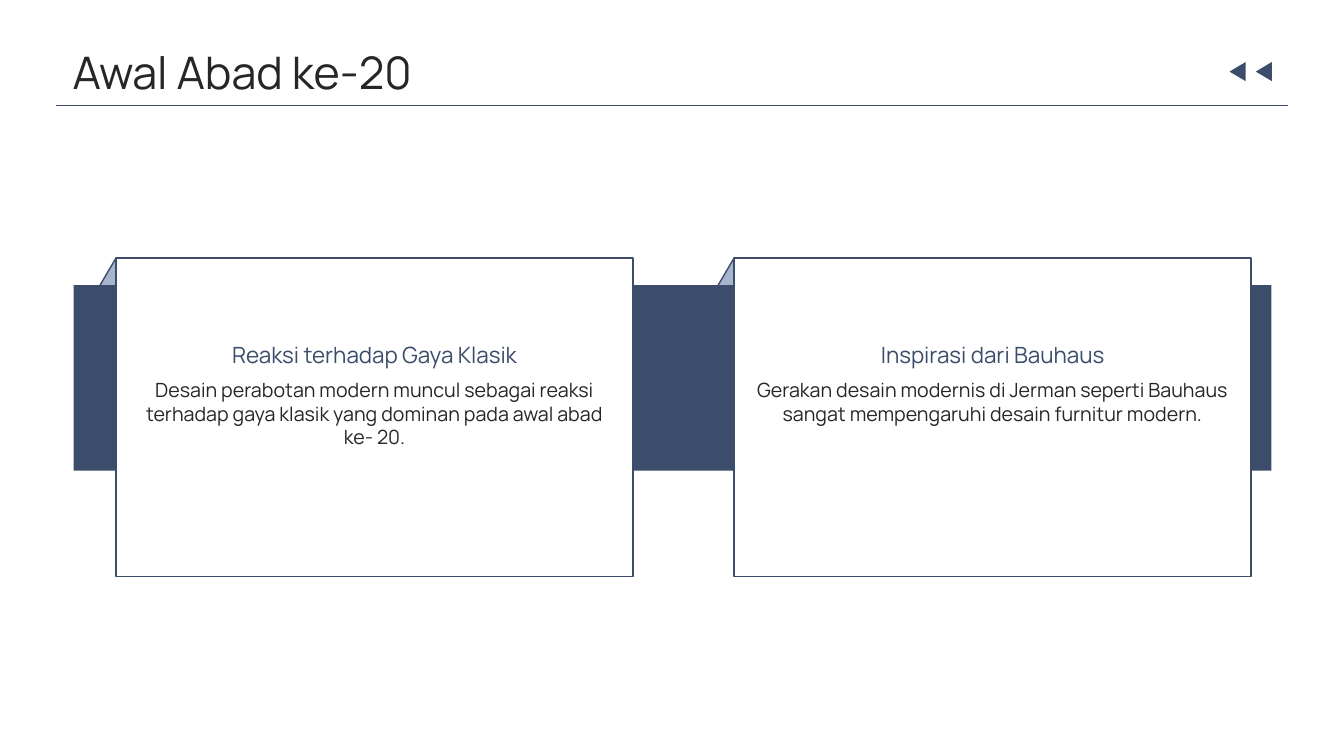
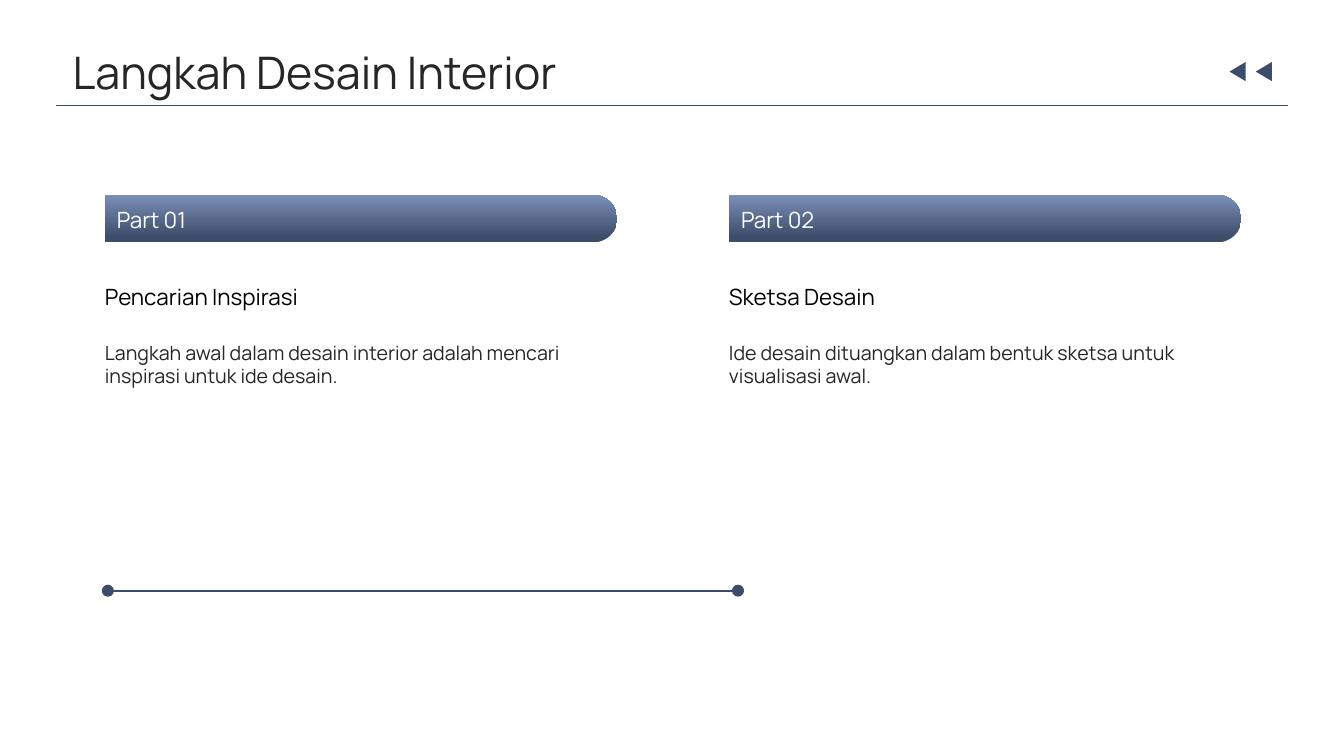
from lxml import etree
from pptx import Presentation
from pptx import util as u
from pptx.dml import color
from pptx.enum import shapes, text
from pptx.oxml import ns

COLORS = {"navy": "3C4C6B", "steel": "7B8FB5", "fold": "A7B4CE",
          "ink": "262626", "black": "000000", "white": "FFFFFF"}
RGB = {name: color.RGBColor.from_string(value) for name, value in COLORS.items()}
FONT = "Manrope"
SHAPE, ALIGN, ANCHOR = shapes.MSO_SHAPE, text.PP_ALIGN, text.MSO_ANCHOR


def add_shape(s, kind, box, fill, line=None, rotation=0):
    sp = s.shapes.add_shape(kind, *map(u.Inches, box))
    sp.shadow.inherit = False
    sp.rotation = rotation
    sp.fill.solid()
    sp.fill.fore_color.rgb = RGB[fill]
    if line:
        sp.line.color.rgb = RGB[line]
        sp.line.width = u.Pt(1)
    else:
        sp.line.fill.background()
    return sp


def add_text(s, content, box, size=14, fill="ink", align=ALIGN.LEFT,
             anchor=ANCHOR.TOP, wrap=True, sp=None):
    left, top, width, height = map(u.Inches, box)
    if sp is None:
        sp = s.shapes.add_textbox(left, top, width, height)
    sp.left, sp.top, sp.width, sp.height = left, top, width, height
    tf = sp.text_frame
    tf.auto_size = text.MSO_AUTO_SIZE.NONE
    tf.word_wrap = wrap
    tf.vertical_anchor = anchor
    tf.margin_left = tf.margin_top = tf.margin_right = tf.margin_bottom = 0
    p = tf.paragraphs[0]
    p.alignment = align
    r = p.add_run()
    r.text = content
    r.font.name, r.font.size = FONT, u.Pt(size)
    r.font.color.rgb = RGB[fill]


prs = Presentation()
prs.slide_width, prs.slide_height = u.Inches(13.33), u.Inches(7.5)

slides, lines = [], []
for title in ("Awal Abad ke-20", "Langkah Desain Interior"):
    s = prs.slides.add_slide(prs.slide_layouts[5])
    add_text(s, title, (0.72, 0.46, 11.88, 0.51), size=32,
             anchor=ANCHOR.MIDDLE, sp=s.shapes.title)
    for left in (12.18, 12.44):
        add_shape(s, SHAPE.ISOSCELES_TRIANGLE, (left, 0.63, 0.19, 0.16), "navy",
                  rotation=270)
    slides.append(s)
    lines.append((s, 0.56, 12.77, 1.05, 0.75))
history, steps = slides

cards = [
    (1.15, "Reaksi terhadap Gaya Klasik",
     "Desain perabotan modern muncul sebagai reaksi terhadap gaya klasik "
     "yang dominan pada awal abad ke- 20."),
    (7.28, "Inspirasi dari Bauhaus",
     "Gerakan desain modernis di Jerman seperti Bauhaus sangat mempengaruhi "
     "desain furnitur modern."),
]
for left, heading, body in cards:
    add_shape(history, SHAPE.ISOSCELES_TRIANGLE, (left - 0.24, 2.57, 0.47, 0.4),
              "fold", line="navy")
add_shape(history, SHAPE.RECTANGLE, (0.73, 2.83, 11.88, 1.84), "navy")
for left, heading, body in cards:
    add_shape(history, SHAPE.RECTANGLE, (left, 2.56, 5.13, 3.16), "white", line="navy")
    add_text(history, heading, (left + 0.21, 2.86, 4.71, 0.79), size=16, fill="navy",
             align=ALIGN.CENTER, anchor=ANCHOR.BOTTOM)
    add_text(history, body, (left + 0.21, 3.75, 4.71, 1.84), align=ALIGN.CENTER)

parts = [
    (1.04, "Part 01", "Pencarian Inspirasi",
     "Langkah awal dalam desain interior adalah mencari inspirasi untuk ide desain."),
    (7.23, "Part 02", "Sketsa Desain",
     "Ide desain dituangkan dalam bentuk sketsa untuk visualisasi awal."),
]
for left, label, heading, body in parts:
    tab = add_shape(steps, SHAPE.ROUND_2_SAME_RECTANGLE,
                    (left + 2.305, -0.37, 0.47, 5.08), "navy", rotation=90)
    tab.adjustments[0], tab.adjustments[1] = 0.5, 0
    tab.fill.gradient()
    tab.fill.gradient_angle = 180
    for stop, position, name in zip(tab.fill.gradient_stops, (0.1, 1), ("navy", "steel")):
        stop.position = position
        stop.color.rgb = RGB[name]
    add_text(steps, label, (left + 0.12, 2.02, 2.13, 0.31), size=16, fill="white",
             anchor=ANCHOR.MIDDLE, wrap=False)
    add_text(steps, heading, (left, 2.51, 5.08, 0.87), size=16, fill="black",
             anchor=ANCHOR.MIDDLE)
    add_text(steps, body, (left, 3.38, 5.08, 1.94))

lines.append((steps, 1.06, 7.32, 5.86, 1.5))
for left in (1.01, 7.26):
    add_shape(steps, SHAPE.OVAL, (left, 5.8, 0.12, 0.12), "navy")

for s, start, end, y, width in lines:
    line = s.shapes.add_connector(shapes.MSO_CONNECTOR.STRAIGHT,
                                  *map(u.Inches, (start, y, end, y)))
    line.line.color.rgb = RGB["navy"]
    line.line.width = u.Pt(width)
    etree.SubElement(line._element.spPr, ns.qn("a:effectLst"))

prs.save("out.pptx")
